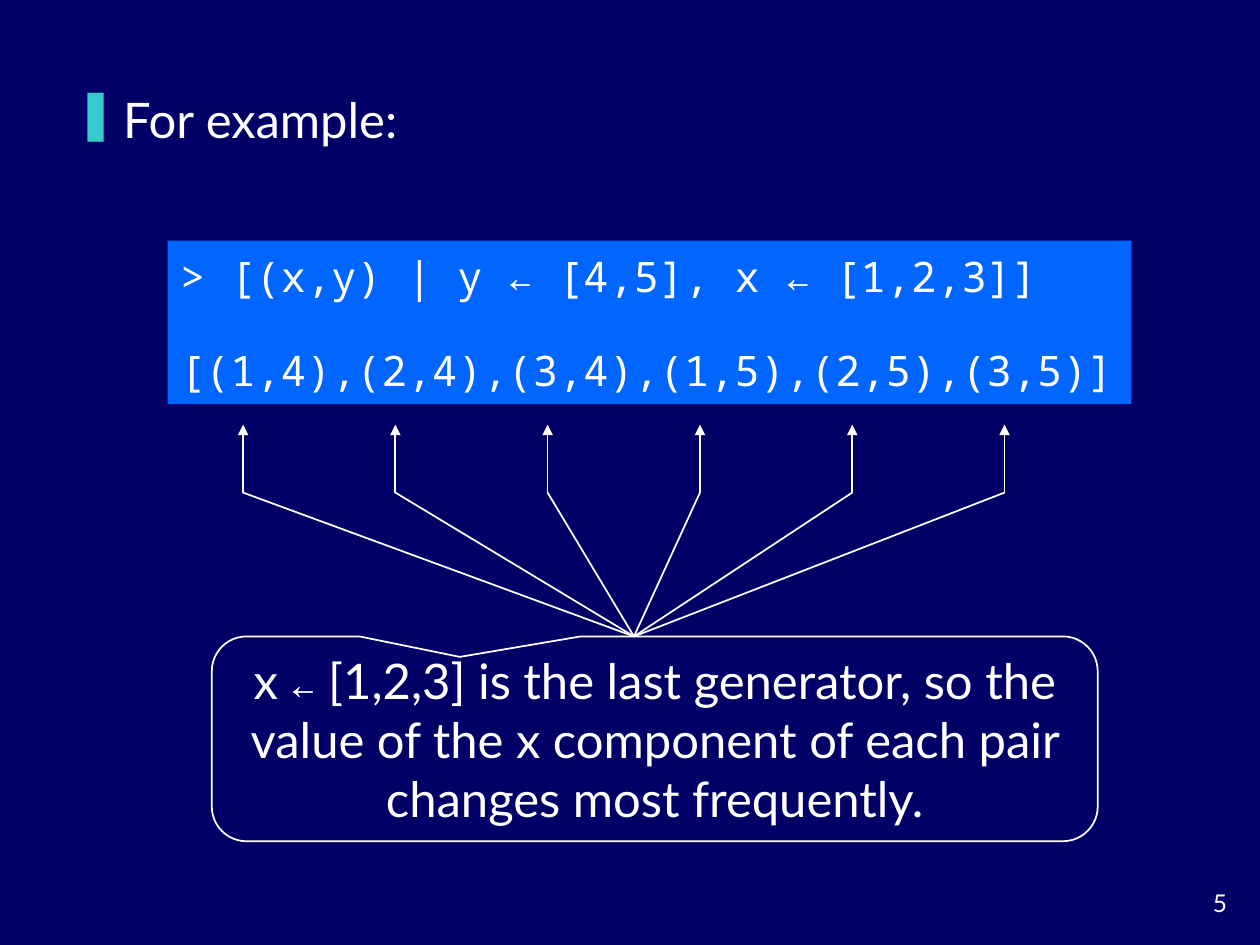
import pptx
import pptx.util
import pptx.dml.color
import pptx.enum.shapes
import pptx.enum.text
from lxml import etree
from pptx.util import Cm, Pt
from pptx.oxml.ns import qn

LATO, MONO = "Lato", "Noto Sans Mono"
WHITE, NAVY, BLUE, TEAL = "FFFFFF", "000066", "0066FF", "33CCCC"
ALIGN = pptx.enum.text.PP_ALIGN
MIDDLE = pptx.enum.text.MSO_ANCHOR.MIDDLE
SHAPE = pptx.enum.shapes.MSO_SHAPE

# Each paragraph is a list of runs: (text, size, font)
HEADING = [[("For example:", 28, LATO)]]
CODE = [
    [("> [(x,y) | y ← [4,5], x ← [1,2,3]]", 24, MONO)],
    [("[(1,4),(2,4),(3,4),(1,5),(2,5),(3,5)]", 24, MONO)],
]
REMARK = [[
    ("x ", 28, LATO),
    ("←", 24, MONO),
    (" [1,2,3] is the last generator, so the value of the x component "
     "of each pair changes most frequently.", 28, LATO),
]]
NUMBER = [[("5", 14, LATO)]]

# Arrows, in cm: one under each pair, all fanning out from the callout
PAIRS, FIRST_X, PITCH = 6, 4.9, 3.07
TIP_Y, BEND_Y = 8.56, 9.93
HUB = (12.78, 12.83)


def rgb(colour):
    return pptx.dml.color.RGBColor.from_string(colour)


def place(sp, left, top, width, height):
    sp.left, sp.top, sp.width, sp.height = map(Cm, (left, top, width, height))


def write(sp, paragraphs, align=ALIGN.LEFT, wrap=True, gap=0):
    """Fill a shape with paragraphs, gap points apart."""
    tf = sp.text_frame
    tf.word_wrap = wrap
    tf.auto_size = pptx.enum.text.MSO_AUTO_SIZE.NONE
    tf.vertical_anchor = MIDDLE
    for i, runs in enumerate(paragraphs):
        p = tf.add_paragraph() if i else tf.paragraphs[0]
        p.alignment = align
        p.space_before = Pt(gap if i else 0)
        for text, size, font in runs:
            r = p.add_run()
            r.text = text
            r.font.size, r.font.name = Pt(size), font
            r.font.color.rgb = rgb(WHITE)


def add_bullet(p, char, colour, indent):
    pPr = p._p.get_or_add_pPr()
    pPr.set("marL", str(indent))
    pPr.set("indent", str(-indent))
    buClr = etree.SubElement(pPr, qn("a:buClr"))
    etree.SubElement(buClr, qn("a:srgbClr")).set("val", colour)
    etree.SubElement(pPr, qn("a:buChar")).set("char", char)


def add_line(s, start, end, arrow=False):
    line = s.shapes.add_connector(
        pptx.enum.shapes.MSO_CONNECTOR.STRAIGHT, *map(Cm, start + end))
    line.line.color.rgb = rgb(WHITE)
    line.line.width = Pt(1)
    if arrow:
        ln = line.line._get_or_add_ln()
        etree.SubElement(ln, qn("a:tailEnd")).set("type", "triangle")
    etree.SubElement(line._element.spPr, qn("a:effectLst"))


prs = pptx.Presentation()
prs.slide_width, prs.slide_height = Cm(25.4), Cm(19.05)
s = prs.slides.add_slide(prs.slide_layouts[5])
s.background.fill.solid()
s.background.fill.fore_color.rgb = rgb(NAVY)

title = s.shapes.title
place(title, 1.27, 1.57, 7.9, 1.65)
write(title, HEADING)
add_bullet(title.text_frame.paragraphs[0], "❚", TEAL, Cm(0.96))

code = s.shapes.add_shape(SHAPE.RECTANGLE, 0, 0, 0, 0)
place(code, 3.38, 4.85, 19.43, 3.3)
code.shadow.inherit = False
code.fill.solid()
code.fill.fore_color.rgb = rgb(BLUE)
code.line.fill.background()
write(code, CODE, wrap=False, gap=25)

callout = s.shapes.add_shape(SHAPE.ROUNDED_RECTANGULAR_CALLOUT, 0, 0, 0, 0)
place(callout, 4.27, 12.83, 17.86, 4.13)
for i, value in enumerate((-0.22, -0.4, 0.17)):
    callout.adjustments[i] = value
callout.shadow.inherit = False
callout.fill.background()
callout.line.color.rgb = rgb(WHITE)
callout.line.width = Pt(1)
write(callout, REMARK, ALIGN.CENTER)

for i in range(PAIRS):
    x = FIRST_X + i * PITCH
    add_line(s, (x, BEND_Y), (x, TIP_Y), arrow=True)
    add_line(s, HUB, (x, BEND_Y))

number = s.shapes.add_textbox(0, 0, 0, 0)
place(number, 23.29, 17.78, 1.7, 0.84)
write(number, NUMBER, ALIGN.RIGHT)

prs.save("out.pptx")
